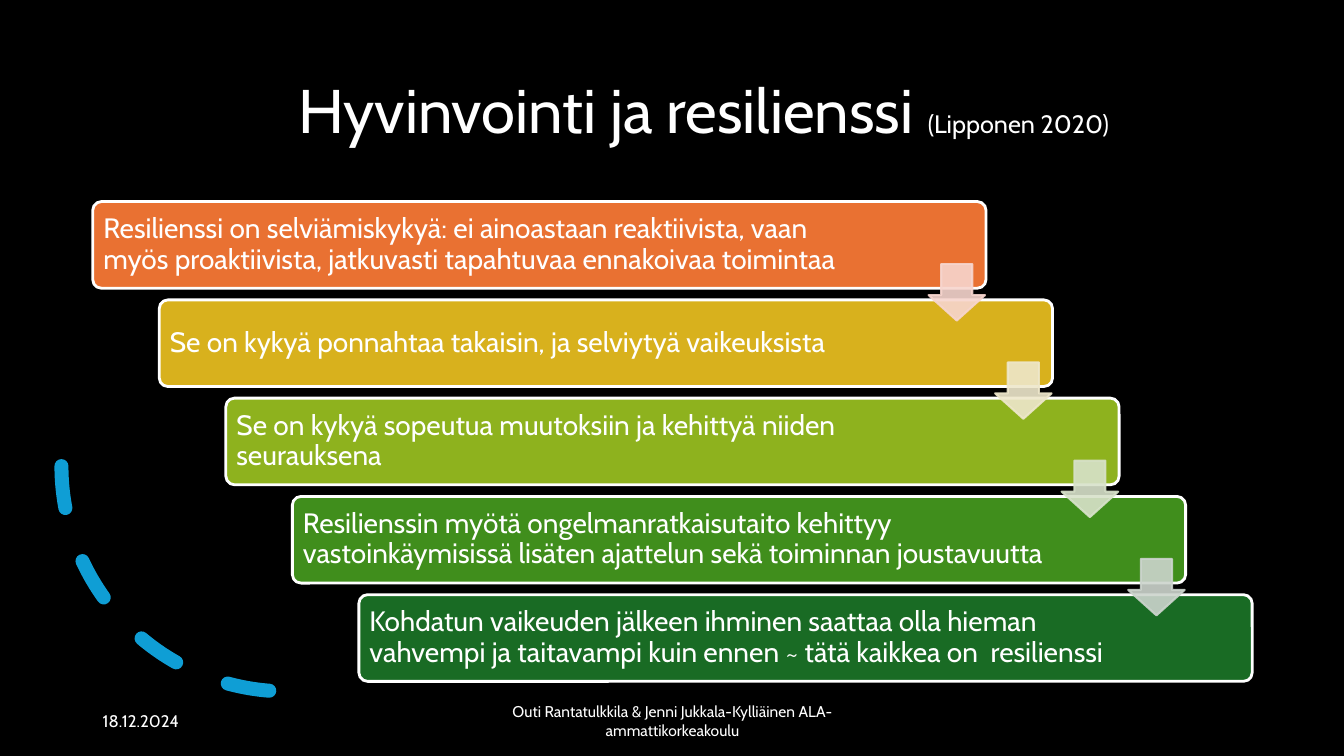
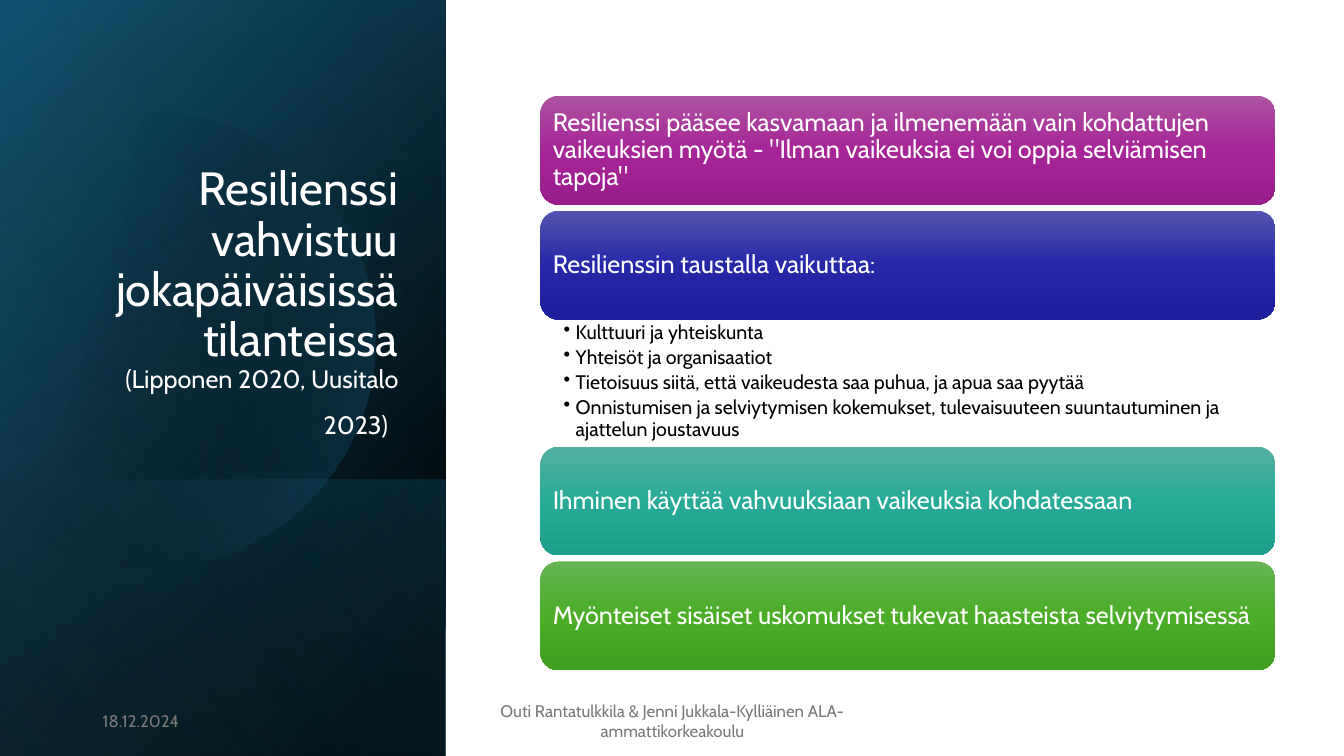
"""Builds two slides about resilience: a staircase of steps and a list of cards."""
import dataclasses
import math
import typing

import lxml.etree
import pptx
import pptx.dml.color
import pptx.enum.dml
import pptx.enum.shapes
import pptx.enum.text
import pptx.oxml.ns
import pptx.util

Inches = pptx.util.Inches
Pt = pptx.util.Pt
RGBColor = pptx.dml.color.RGBColor
Shape = pptx.enum.shapes.MSO_SHAPE
Align = pptx.enum.text.PP_ALIGN
Anchor = pptx.enum.text.MSO_ANCHOR
qn = pptx.oxml.ns.qn

FONT = "Cabin"
WHITE = RGBColor(0xFF, 0xFF, 0xFF)
BLACK = RGBColor(0x00, 0x00, 0x00)
GREY = RGBColor(0x79, 0x79, 0x79)
ARC_BLUE = RGBColor(0x0F, 0x9E, 0xD5)
NAVY = RGBColor(0x10, 0x48, 0x62)
TEAL = RGBColor(0x15, 0x60, 0x82)
SKY = RGBColor(0x46, 0xB1, 0xE1)

DATE = "18.12.2024"
AUTHORS = "Outi Rantatulkkila & Jenni Jukkala-Kylliäinen ALA-ammattikorkeakoulu"
PANEL_WIDTH = 4.42
STEP_SHIFT = 0.66
STEP_DROP = 3.9 / 4
CARD_HEIGHT = 1.08


@dataclasses.dataclass(frozen=True)
class Box:
    """Place and size in inches."""
    left: float
    top: float
    width: float
    height: float

    def lengths(self) -> tuple:
        """Returns the four values as lengths."""
        return tuple(Inches(value) for value in dataclasses.astuple(self))


@dataclasses.dataclass(frozen=True)
class Stop:
    """Gradient stop with position and opacity in percent."""
    position: int
    color: RGBColor
    opacity: int = 100


@dataclasses.dataclass(frozen=True)
class Panel:
    """Gradient layer of the side panel."""
    top: float
    height: float
    angle: int
    stops: tuple


@dataclasses.dataclass(frozen=True)
class Step:
    """Bar of the staircase and the arrow that leaves it."""
    text: str
    fill: RGBColor
    arrow: typing.Optional[RGBColor] = None


@dataclasses.dataclass(frozen=True)
class Card:
    """Card with a vertical three-colour gradient."""
    text: str
    top: float
    colors: tuple


STEPS = (
    Step("Resilienssi on selviämiskykyä: ei ainoastaan reaktiivista, vaan myös proaktiivista, "
         "jatkuvasti tapahtuvaa ennakoivaa toimintaa",
         RGBColor(0xE9, 0x71, 0x32), RGBColor(0xF7, 0xD5, 0xCE)),
    Step("Se on kykyä ponnahtaa takaisin, ja selviytyä vaikeuksista",
         RGBColor(0xD8, 0xB1, 0x1D), RGBColor(0xEE, 0xE7, 0xCB)),
    Step("Se on kykyä sopeutua muutoksiin ja kehittyä niiden seurauksena",
         RGBColor(0x8E, 0xB2, 0x1E), RGBColor(0xD8, 0xE2, 0xCA)),
    Step("Resilienssin myötä ongelmanratkaisutaito kehittyy vastoinkäymisissä lisäten "
         "ajattelun sekä toiminnan joustavuutta",
         RGBColor(0x40, 0x8E, 0x1C), RGBColor(0xCC, 0xD4, 0xCD)),
    Step("Kohdatun vaikeuden jälkeen ihminen saattaa olla hieman vahvempi ja taitavampi kuin "
         "ennen ~ tätä kaikkea on  resilienssi", RGBColor(0x19, 0x6B, 0x24)),
)

CARDS = (
    Card("Resilienssi pääsee kasvamaan ja ilmenemään vain kohdattujen vaikeuksien myötä - "
         "\"Ilman vaikeuksia ei voi oppia selviämisen tapoja\"", 0.95,
         (RGBColor(0xAC, 0x53, 0xA0), RGBColor(0xA6, 0x25, 0x98), RGBColor(0x99, 0x1C, 0x8B))),
    Card("Resilienssin taustalla vaikuttaa:", 2.09,
         (RGBColor(0x53, 0x54, 0xAE), RGBColor(0x26, 0x28, 0xA8), RGBColor(0x1D, 0x1E, 0x9B))),
    Card("Ihminen käyttää vahvuuksiaan vaikeuksia kohdatessaan", 4.43,
         (RGBColor(0x53, 0xB0, 0xA1), RGBColor(0x27, 0xAB, 0x98), RGBColor(0x1D, 0x9D, 0x8B))),
    Card("Myönteiset sisäiset uskomukset tukevat haasteista selviytymisessä", 5.57,
         (RGBColor(0x66, 0xB3, 0x54), RGBColor(0x4B, 0xAD, 0x28), RGBColor(0x40, 0x9F, 0x1E))),
)

BULLETS = (
    "Kulttuuri ja yhteiskunta",
    "Yhteisöt ja organisaatiot",
    "Tietoisuus siitä, että vaikeudesta saa puhua, ja apua saa pyytää",
    "Onnistumisen ja selviytymisen kokemukset, tulevaisuuteen suuntautuminen ja "
    "ajattelun joustavuus",
)

PANELS = (
    Panel(0, 7.5, 50, (Stop(8, BLACK), Stop(100, NAVY))),
    Panel(0, 7.5, 30, (Stop(0, BLACK, 0), Stop(99, TEAL, 46))),
    Panel(4.76, 2.74, 130, (Stop(2, TEAL, 29), Stop(100, BLACK, 30))),
)
PANEL_GLOW = Panel(0, 7.5, 120, (Stop(0, BLACK, 0), Stop(99, SKY, 11)))


def style_span(span, size: float, color: RGBColor) -> None:
    """Sets the font of a run."""
    span.font.name = FONT
    span.font.size = Pt(size)
    span.font.color.rgb = color


def style_frame(frame, size: float, color: RGBColor, align=Align.LEFT,
                spacing: float = 0.9, anchor=Anchor.MIDDLE) -> None:
    """Sets wrapping, anchor, alignment and font of a text frame."""
    frame.word_wrap = True
    frame.vertical_anchor = anchor
    for para in frame.paragraphs:
        para.alignment = align
        para.line_spacing = spacing
        for span in para.runs:
            style_span(span, size, color)


def add_text(page, box: Box, text: str, size: float, color: RGBColor, **style):
    """Adds a text box and returns its text frame."""
    frame = page.shapes.add_textbox(*box.lengths()).text_frame
    frame.text = text
    style_frame(frame, size, color, **style)
    return frame


def add_span(para, text: str, size: float) -> None:
    """Appends a white run to a title."""
    span = para.add_run()
    span.text = text
    style_span(span, size, WHITE)


def add_preset(page, kind, box: Box):
    """Adds a preset shape without shadow or outline."""
    shape = page.shapes.add_shape(kind, *box.lengths())
    shape.shadow.inherit = False
    shape.line.fill.background()
    return shape


def set_opacity(fill, percent: int) -> None:
    """Sets the opacity of a solid fill element."""
    color = fill.find(qn("a:srgbClr"))
    lxml.etree.SubElement(color, qn("a:alpha")).set("val", str(percent * 1000))


def set_gradient(shape, angle: int, stops: typing.Iterable[Stop]) -> None:
    """Fills a shape with a linear gradient."""
    shape.fill.gradient()
    gradient = shape.element.spPr.find(qn("a:gradFill"))
    stop_list = gradient.find(qn("a:gsLst"))
    for old_stop in list(stop_list):
        stop_list.remove(old_stop)
    for stop in stops:
        entry = lxml.etree.SubElement(stop_list, qn("a:gs"))
        entry.set("pos", str(stop.position * 1000))
        color = lxml.etree.SubElement(entry, qn("a:srgbClr"))
        color.set("val", str(stop.color))
        if stop.opacity < 100:
            set_opacity(entry, stop.opacity)
    gradient.find(qn("a:lin")).set("ang", str(angle * 60000))


def add_footer(page, color: RGBColor, authors_size: float) -> None:
    """Adds the date and the authors."""
    add_text(page, Box(0.92, 6.95, 3, 0.4), DATE, 12, color, spacing=1)
    add_text(page, Box(4.42, 6.95, 4.5, 0.4), AUTHORS, authors_size, color,
             align=Align.CENTER, spacing=1)


def add_dashed_arc(page) -> None:
    """Adds the dashed quarter circle at the lower left."""
    arc = add_preset(page, Shape.ARC, Box(0.61, 2.39, 4.47, 4.47))
    arc.rotation = 90
    arc.element.spPr.find(qn("a:xfrm")).set("flipV", "1")
    arc.fill.background()
    arc.line.color.rgb = ARC_BLUE
    arc.line.width = Pt(10)
    arc.line.dash_style = pptx.enum.dml.MSO_LINE.DASH
    arc.element.spPr.find(qn("a:ln")).set("cap", "rnd")


def add_step(page, index: int, step: Step) -> None:
    """Adds one bar of the staircase."""
    bar = add_preset(page, Shape.ROUNDED_RECTANGLE,
                     Box(0.92 + index * STEP_SHIFT, 2 + index * STEP_DROP, 8.86, 0.86))
    bar.adjustments[0] = 0.1
    bar.fill.solid()
    bar.fill.fore_color.rgb = step.fill
    bar.line.color.rgb = WHITE
    bar.line.width = Pt(2)
    frame = bar.text_frame
    frame.margin_left = frame.margin_top = frame.margin_bottom = Inches(0.08)
    frame.margin_right = Inches(1.3)
    frame.text = step.text
    style_frame(frame, 20, WHITE)


def add_step_arrow(page, index: int, color: RGBColor) -> None:
    """Adds the translucent arrow to the next bar."""
    arrow = add_preset(page, Shape.DOWN_ARROW,
                       Box(9.21 + index * STEP_SHIFT, 2.62 + index * STEP_DROP, 0.56, 0.56))
    arrow.adjustments[0] = 0.55
    arrow.adjustments[1] = 0.45
    arrow.fill.solid()
    arrow.fill.fore_color.rgb = color
    arrow.line.color.rgb = color
    arrow.line.width = Pt(1.5)
    for fill in arrow.element.spPr.iter(qn("a:solidFill")):
        set_opacity(fill, 90)


def add_panel(page, panel: Panel) -> None:
    """Adds a side panel layer, turned a quarter around its centre."""
    offset = (PANEL_WIDTH - panel.height) / 2
    layer = add_preset(page, Shape.RECTANGLE,
                       Box(offset, panel.top - offset, panel.height, PANEL_WIDTH))
    layer.rotation = 90
    layer.element.spPr.find(qn("a:xfrm")).set("flipH", "1")
    set_gradient(layer, panel.angle, panel.stops)


def add_panel_circle(page) -> None:
    """Adds the soft circle cut off at the slide edge."""
    points = [(Inches(max(0, 1.45 + 2.27 * math.cos(math.radians(angle)))),
               Inches(3.37 + 2.27 * math.sin(math.radians(angle))))
              for angle in range(0, 360, 3)]
    builder = page.shapes.build_freeform(*points[0])
    builder.add_line_segments(points[1:], close=True)
    circle = builder.convert_to_shape()
    circle.shadow.inherit = False
    circle.line.fill.background()
    set_gradient(circle, 14, (Stop(29, BLACK, 0), Stop(100, TEAL, 43)))


def add_card(page, card: Card) -> None:
    """Adds a gradient card with its text."""
    shape = add_preset(page, Shape.ROUNDED_RECTANGLE, Box(5.36, card.top, 7.29, CARD_HEIGHT))
    set_gradient(shape, 90, [Stop(50 * place, color) for place, color in enumerate(card.colors)])
    frame = shape.text_frame
    frame.margin_left = frame.margin_right = Inches(0.07)
    frame.margin_top = frame.margin_bottom = Inches(0.07)
    frame.text = card.text
    style_frame(frame, 18, WHITE)


def add_bullets(page) -> None:
    """Adds the bulleted list below the second card."""
    frame = add_text(page, Box(5.36, 3.17, 7.29, 1.26), "\n".join(BULLETS), 14, BLACK,
                     anchor=Anchor.TOP)
    frame.margin_left, frame.margin_right = Inches(0.23), Inches(0.14)
    frame.margin_top = frame.margin_bottom = Inches(0.03)
    for para in frame.paragraphs:
        para.space_after = Pt(2.8)
        properties = para._p.get_or_add_pPr()
        properties.set("marL", str(Inches(0.12)))
        properties.set("indent", str(-Inches(0.12)))
        lxml.etree.SubElement(properties, qn("a:buChar")).set("char", "•")


def build_staircase(page) -> None:
    """Draws the slide with the staircase."""
    page.background.fill.solid()
    page.background.fill.fore_color.rgb = BLACK
    title = add_text(page, Box(2.86, 0.4, 9.56, 1.45), "Hyvinvointi ja resilienssi ", 44, WHITE)
    add_span(title.paragraphs[0], "(Lipponen 2020)", 18)
    add_dashed_arc(page)
    add_footer(page, WHITE, 11.1)
    for index, step in enumerate(STEPS):
        add_step(page, index, step)
    for index, step in enumerate(STEPS):
        if step.arrow is not None:
            add_step_arrow(page, index, step.arrow)


def build_cards(page) -> None:
    """Draws the slide with the side panel and the cards."""
    for panel in PANELS:
        add_panel(page, panel)
    add_panel_circle(page)
    add_panel(page, PANEL_GLOW)
    title = add_text(page, Box(0.64, 1.84, 3.41, 2.62),
                     "Resilienssi vahvistuu jokapäiväisissä tilanteissa", 33.3, WHITE,
                     align=Align.RIGHT, anchor=Anchor.BOTTOM)
    para = title.paragraphs[0]
    para.add_line_break()
    add_span(para, "(Lipponen 2020, Uusitalo 2023)", 18)
    add_span(para, " ", 33.3)
    for card in CARDS:
        add_card(page, card)
    add_bullets(page)
    add_footer(page, GREY, 12)


def main() -> None:
    """Builds and saves the deck."""
    deck = pptx.Presentation()
    deck.slide_width, deck.slide_height = Inches(13.33), Inches(7.5)
    for build in (build_staircase, build_cards):
        build(deck.slides.add_slide(deck.slide_layouts[6]))
    deck.save("out.pptx")


if __name__ == "__main__":
    main()
